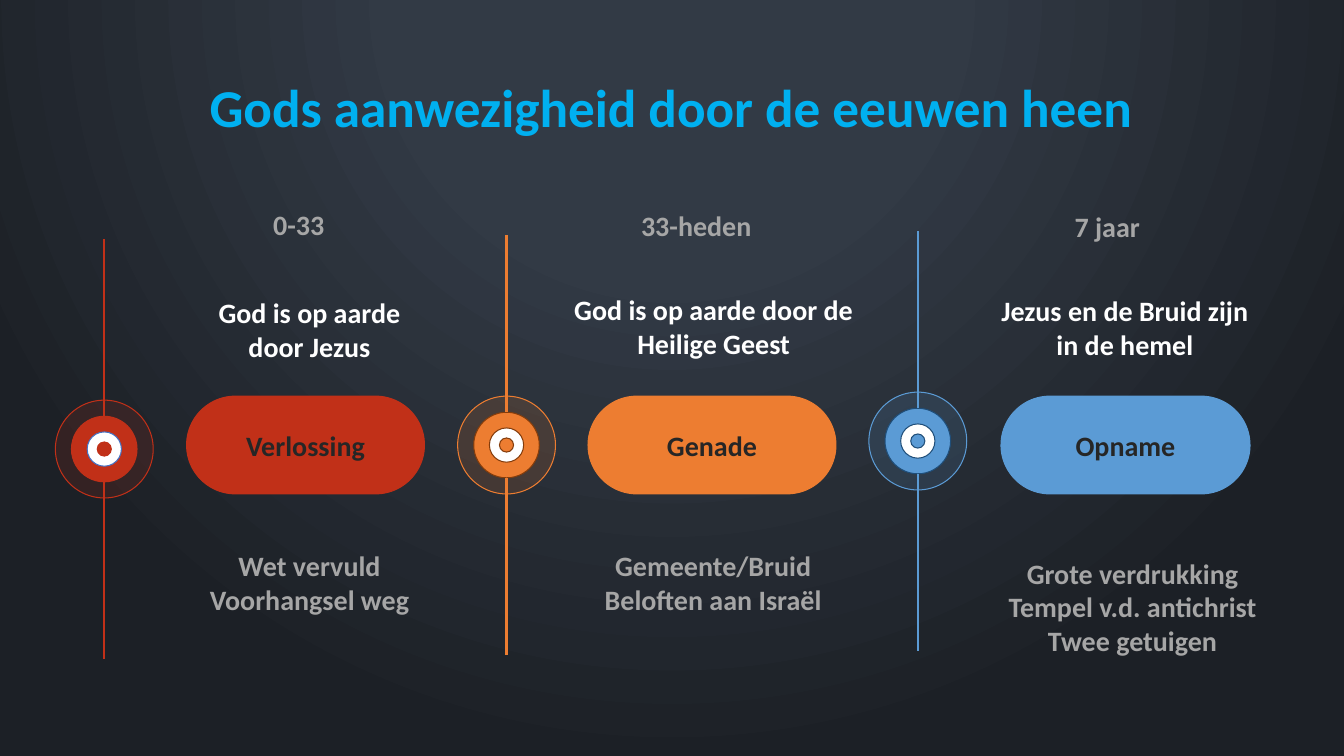
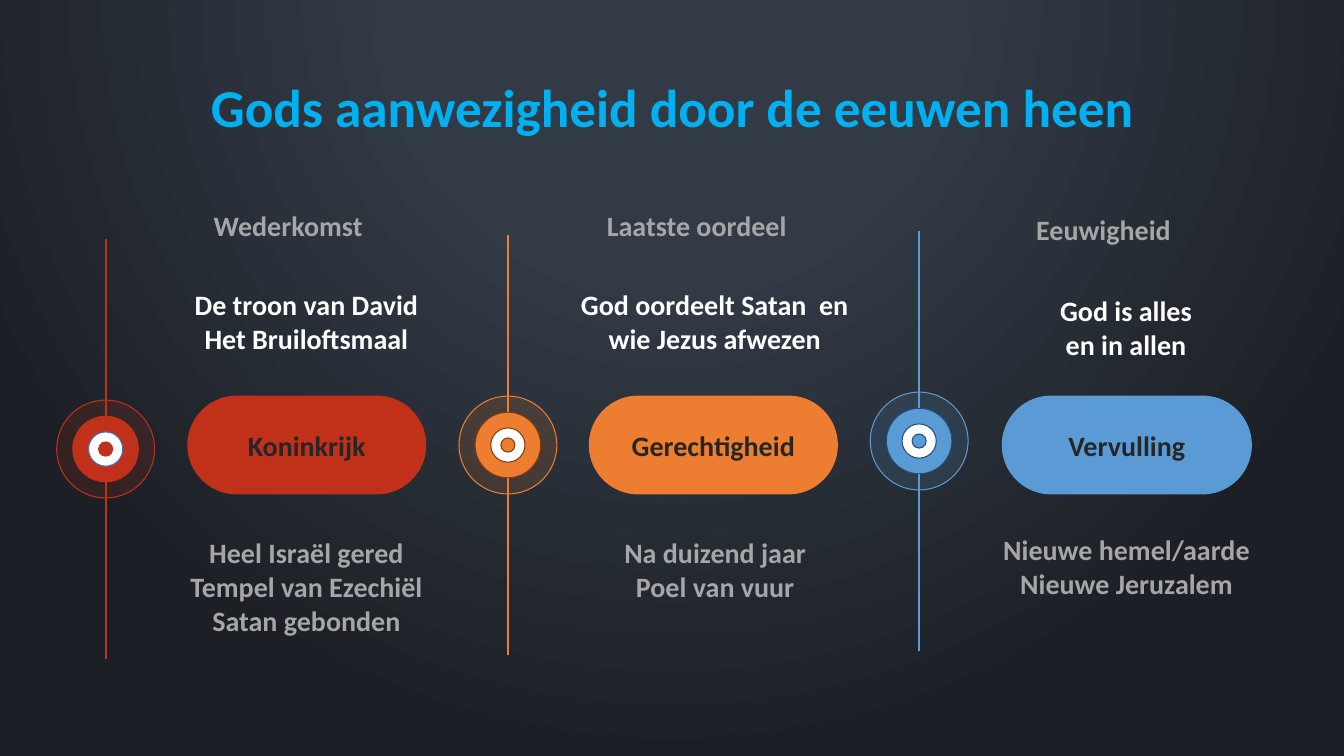
"""Build two timeline slides about God's presence through the ages."""
from lxml.etree import SubElement
from pptx import Presentation
from pptx.dml.color import RGBColor
from pptx.enum.shapes import MSO_CONNECTOR, MSO_SHAPE
from pptx.enum.text import MSO_ANCHOR, PP_ALIGN
from pptx.oxml.ns import qn
from pptx.util import Inches, Pt

COLORS = {
    "title": "00B0F0", "muted": "A6A6A6", "white": "FFFFFF", "dark": "262626",
    "red": "C13018", "orange": "ED7D31", "blue": "5B9BD5",
    "brown": "843C0B", "navy": "1F4E79", "royal": "4472C4",
    "back_light": "323A45", "back_dark": "1C2026",
}
FONT = "Calibri"
TITLE = "Gods aanwezigheid door de eeuwen heen"
SLIDE_SHIFT = 0.1
PILL_TOP, PILL_ROWS = 52.4, 12.93
MARKER_ROW, MARKER_STEP = 59.4, -0.53
RING_COLUMNS = [7.28, 4.88, 2.55, 1.05]
STEM_START, STEM_END = 4.33, 27.75
LINE_ROWS, PADDING_ROWS = 4.45, 1.4

STAGES = [
    {"color": "red", "ring": "red", "eye": "royal", "marker": 7.76, "pill": (13.88, 17.7)},
    {"color": "orange", "ring": "brown", "eye": "brown", "marker": 37.69, "pill": (43.75, 18.45)},
    {"color": "blue", "ring": "navy", "eye": "navy", "marker": 68.29, "pill": (74.48, 18.53)},
]
SLIDES = [
    {
        "pills": ["Verlossing", "Genade", "Opname"],
        "texts": [
            ("0-33", "muted", 1, 20.33, 26.67, 18),
            ("33-heden", "muted", 1, 47.7, 26.8, 18),
            ("7 jaar", "muted", 1, 79.95, 26.93, 18),
            ("God is op aarde door Jezus", "white", 2, 14.63, 38.4, 16.8),
            ("God is op aarde door de Heilige Geest", "white", 2, 41.55, 38, 23.1),
            ("Jezus en de Bruid zijn in de hemel", "white", 2, 73.8, 38.13, 19.8),
            ("Wet vervuld\nVoorhangsel weg", "muted", 2, 13.58, 71.87, 18.9),
            ("Gemeente/Bruid\nBeloften aan Israël", "muted", 2, 39, 71.87, 28.13),
            ("Grote verdrukking\nTempel v.d. antichrist\nTwee getuigen", "muted", 3, 72.6, 72.8, 23.33),
        ],
    },
    {
        "pills": ["Koninkrijk", "Gerechtigheid", "Vervulling"],
        "texts": [
            ("Wederkomst", "muted", 1, 15.9, 26.8, 18),
            ("Laatste oordeel", "muted", 1, 45.15, 26.8, 18),
            ("Eeuwigheid", "muted", 1, 77.1, 27.33, 18),
            ("De troon van David\nHet Bruiloftsmaal", "white", 2, 11.55, 37.33, 22.5),
            ("God oordeelt Satan  en wie Jezus afwezen", "white", 2, 41.63, 37.33, 23.1),
            ("God is alles\nen in allen", "white", 2, 73.88, 38.13, 19.8),
            ("Heel Israël gered\nTempel van Ezechiël\nSatan gebonden", "muted", 3, 12.3, 70.13, 21),
            ("Na duizend jaar\nPoel van vuur", "muted", 2, 39.15, 70.13, 28.13),
            ("Nieuwe hemel/aarde\nNieuwe Jeruzalem", "muted", 2, 72.15, 69.73, 23.33),
        ],
    },
]

presentation = Presentation()
presentation.slide_width = Inches(13.33)
presentation.slide_height = Inches(7.5)
column = presentation.slide_width / 100
row = presentation.slide_height / 100


def place(left, top, width, height):
    """Turn percentages of the slide into lengths."""
    return [round(left * column), round(top * row), round(width * column), round(height * row)]


def write(shape, text, color, size=20, align=PP_ALIGN.CENTER, anchor=MSO_ANCHOR.MIDDLE):
    """Put bold text in a shape."""
    frame = shape.text_frame
    frame.text = text
    frame.word_wrap = True
    frame.vertical_anchor = anchor
    for paragraph in frame.paragraphs:
        paragraph.alignment = align
        for run in paragraph.runs:
            run.font.name, run.font.size, run.font.bold = FONT, Pt(size), True
            run.font.color.rgb = RGBColor.from_string(COLORS[color])


master = presentation.slide_master
master.background.fill.gradient()
gradient = next(master.element.iter(qn("a:gradFill")))
for child in list(gradient):
    gradient.remove(child)
stops = SubElement(gradient, qn("a:gsLst"))
for position, name in [(0, "back_light"), (35, "back_light"), (100, "back_dark")]:
    stop = SubElement(stops, qn("a:gs"), pos=str(position * 1000))
    SubElement(stop, qn("a:srgbClr"), val=COLORS[name])
circle = SubElement(gradient, qn("a:path"), {"path": "circle"})
SubElement(circle, qn("a:fillToRect"), l="50000", t="-80000", r="50000", b="180000")

for slide_index, content in enumerate(SLIDES):
    slide = presentation.slides.add_slide(presentation.slide_layouts[6])
    shift = slide_index * SLIDE_SHIFT

    title = slide.shapes.add_textbox(*place(8.25 + shift, 9.2, 83.4, 10.8))
    write(title, TITLE, "title", size=38)
    title.text_frame.paragraphs[0].line_spacing = 0.9

    for stage_index, stage in enumerate(STAGES):
        color, center = stage["color"], stage["marker"] + shift
        middle = MARKER_ROW + stage_index * MARKER_STEP
        pill_left, pill_columns = stage["pill"]
        marker = slide.shapes.add_group_shape()
        parts = [(slide.shapes, MSO_SHAPE.ROUNDED_RECTANGLE, color, color,
                  place(pill_left + shift, PILL_TOP, pill_columns, PILL_ROWS))]
        fills = [color, color, "white", color]
        outlines = [color, stage["ring"], stage["eye"], stage["ring"]]
        for size, fill, outline in zip(RING_COLUMNS, fills, outlines):
            rows = size * column / row
            parts.append((marker.shapes, MSO_SHAPE.OVAL, fill, outline,
                          place(center - size / 2, middle - rows / 2, size, rows)))

        drawn = []
        for shapes, kind, fill, outline, box in parts:
            shape = shapes.add_shape(kind, *box)
            shape.shadow.inherit = False
            shape.fill.solid()
            shape.fill.fore_color.rgb = RGBColor.from_string(COLORS[fill])
            shape.line.color.rgb = RGBColor.from_string(COLORS[outline])
            shape.line.width = Pt(0.75)
            drawn.append(shape)
        pill, halo = drawn[:2]
        pill.adjustments[0] = 0.5
        write(pill, content["pills"][stage_index], "dark")
        halo_color = next(halo.element.spPr.iter(qn("a:srgbClr")))
        SubElement(halo_color, qn("a:alpha"), val="15000")

        for direction in (-1, 1):
            x, start, _, length = place(center, middle + direction * STEM_START,
                                        0, direction * (STEM_END - STEM_START))
            stem = marker.shapes.add_connector(MSO_CONNECTOR.STRAIGHT, x, start, x, start + length)
            stem.line.color.rgb = RGBColor.from_string(COLORS[color])
            stem.line.width = Pt(1.5)
            SubElement(stem.element.spPr, qn("a:effectLst"))

    for text, color, lines, left, top, width in content["texts"]:
        box = slide.shapes.add_textbox(*place(left, top, width, PADDING_ROWS + lines * LINE_ROWS))
        box.text_frame.margin_left = box.text_frame.margin_right = 0
        align = PP_ALIGN.LEFT if lines == 1 else PP_ALIGN.CENTER
        write(box, text, color, align=align, anchor=MSO_ANCHOR.BOTTOM)

presentation.save("out.pptx")
